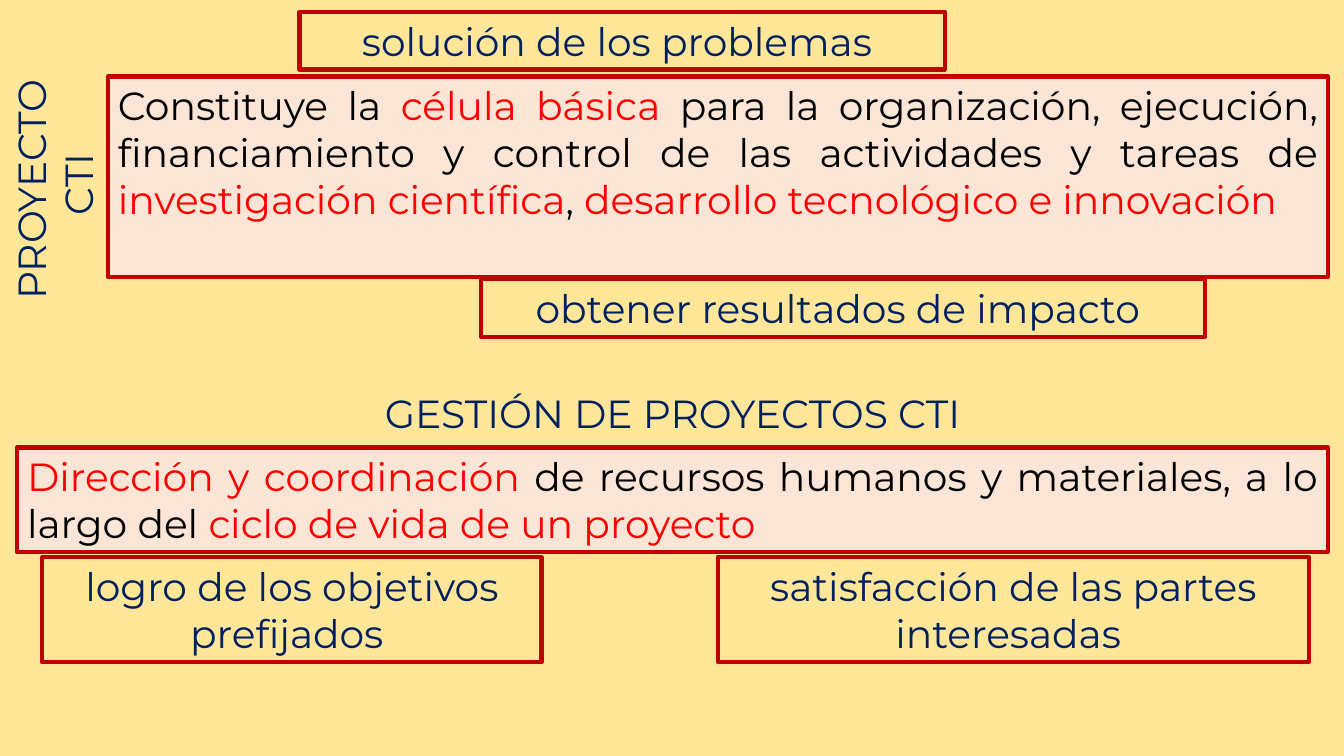
import pptx
import pptx.util
import pptx.dml.color
import pptx.enum.text

PX = 9144
FONT = "Montserrat"
COLORS = {
    "background": "FFE699",
    "panel": "FBE5D6",
    "border": "C00000",
    "navy": "002060",
    "black": "000000",
    "red": "FF0000",
}
ALIGN = pptx.enum.text.PP_ALIGN


def px(n):
    return pptx.util.Emu(n * PX)


def rgb(name):
    return pptx.dml.color.RGBColor.from_string(COLORS[name])


def place(sp, left, top, width, height):
    sp.left, sp.top, sp.width, sp.height = map(px, (left, top, width, height))


def prepare(tf):
    tf.word_wrap = True
    tf.auto_size = pptx.enum.text.MSO_AUTO_SIZE.NONE
    tf.vertical_anchor = pptx.enum.text.MSO_ANCHOR.TOP


def style(p, align):
    p.alignment = align
    p.font.name = FONT
    p.font.size = pptx.util.Pt(28)


def write(sp, *lines):
    tf = sp.text_frame
    prepare(tf)
    tf.text = "\n".join(lines)
    for p in tf.paragraphs:
        style(p, ALIGN.CENTER)
        p.font.color.rgb = rgb("navy")


def add_box(s, at):
    sp = s.shapes.add_textbox(*map(px, at))
    sp.line.color.rgb = rgb("border")
    sp.line.width = pptx.util.Pt(3)
    return sp


def add_definition(s, at, runs):
    sp = add_box(s, at)
    sp.fill.solid()
    sp.fill.fore_color.rgb = rgb("panel")
    prepare(sp.text_frame)
    p = sp.text_frame.paragraphs[0]
    style(p, ALIGN.JUSTIFY)
    for text, color in runs:
        r = p.add_run()
        r.text = text
        r.font.color.rgb = rgb(color)


def add_goal(s, at, text):
    write(add_box(s, at), text)


def add_side_heading(s, at, *lines):
    sp = s.shapes.add_textbox(*map(px, at))
    sp.rotation = 270
    write(sp, *lines)


def main():
    prs = pptx.Presentation()
    prs.slide_width, prs.slide_height = px(1333), px(750)
    s = prs.slides.add_slide(prs.slide_layouts[5])
    s.background.fill.solid()
    s.background.fill.fore_color.rgb = rgb("background")

    place(s.shapes.title, 297, 381, 740, 57)
    write(s.shapes.title, "GESTIÓN DE PROYECTOS CTI")

    add_side_heading(s, (-93, 136, 295, 104), "PROYECTO", " CTI")
    add_definition(s, (107, 76, 1210, 199), [
        ("Constituye la ", "black"),
        ("célula básica", "red"),
        (" para la organización, ejecución, financiamiento y control"
         " de las actividades y tareas de ", "black"),
        ("investigación científica", "red"),
        (", ", "black"),
        ("desarrollo tecnológico e innovación", "red"),
    ])
    add_definition(s, (17, 444, 1300, 104), [
        ("Dirección y coordinación ", "red"),
        ("de recursos humanos y materiales, a lo largo del ", "black"),
        ("ciclo de vida de un proyecto", "red"),
    ])
    add_goal(s, (297, 12, 640, 57), "solución de los problemas ")
    add_goal(s, (477, 277, 718, 57), "obtener resultados de impacto ")
    add_goal(s, (712, 553, 586, 104), "satisfacción de las partes interesadas ")
    add_goal(s, (42, 553, 495, 104), "logro de los objetivos prefijados ")

    prs.save("out.pptx")


if __name__ == "__main__":
    main()
